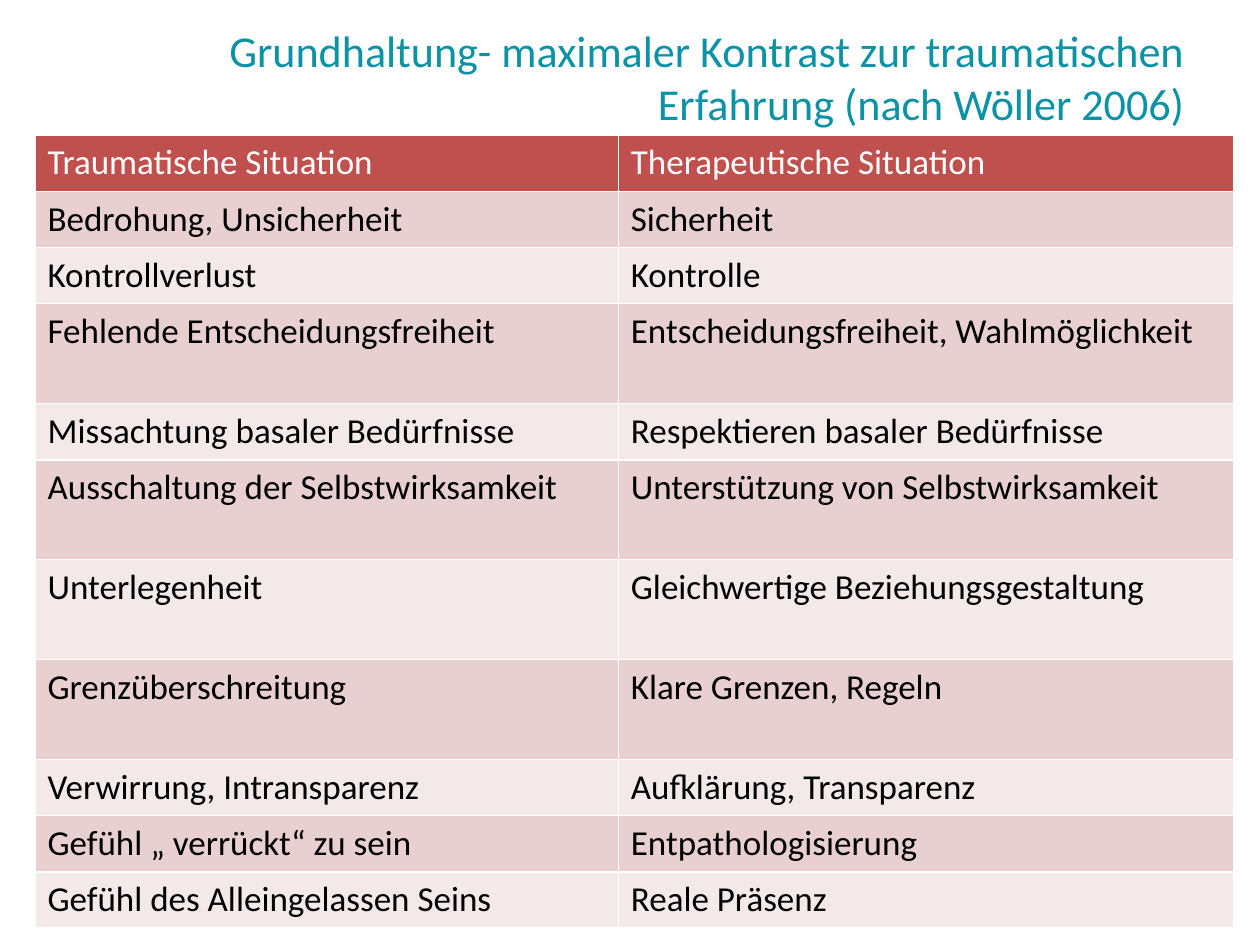
from lxml.etree import SubElement
from pptx import Presentation
from pptx.dml.color import RGBColor
from pptx.enum.text import MSO_ANCHOR, PP_ALIGN
from pptx.oxml.ns import qn
from pptx.util import Pt

FONT = "Calibri"
TEAL = RGBColor(0x0C, 0x92, 0xA5)
RED = RGBColor(0xC0, 0x50, 0x4D)
ROSE = RGBColor(0xE8, 0xD0, 0xD0)
PALE_ROSE = RGBColor(0xF4, 0xE9, 0xE9)
WHITE = RGBColor(0xFF, 0xFF, 0xFF)
BLACK = RGBColor(0, 0, 0)

TITLE = "Grundhaltung- maximaler Kontrast zur traumatischen Erfahrung (nach Wöller 2006)"
LOW, TALL = 32.1, 57.1
COLUMN_WIDTHS = (333.3, 351.5)
CONTRASTS = [
    (LOW, "Traumatische Situation", "Therapeutische Situation"),
    (LOW, "Bedrohung, Unsicherheit", "Sicherheit"),
    (LOW, "Kontrollverlust", "Kontrolle"),
    (TALL, "Fehlende Entscheidungsfreiheit", "Entscheidungsfreiheit, Wahlmöglichkeit"),
    (LOW, "Missachtung basaler Bedürfnisse", "Respektieren basaler Bedürfnisse"),
    (TALL, "Ausschaltung der Selbstwirksamkeit", "Unterstützung von Selbstwirksamkeit"),
    (TALL, "Unterlegenheit", "Gleichwertige Beziehungsgestaltung"),
    (TALL, "Grenzüberschreitung", "Klare Grenzen, Regeln"),
    (LOW, "Verwirrung, Intransparenz", "Aufklärung, Transparenz"),
    (LOW, "Gefühl „ verrückt“ zu sein", "Entpathologisierung"),
    (LOW, "Gefühl des Alleingelassen Seins", "Reale Präsenz"),
]


def add_run(paragraph, text, size, color):
    run = paragraph.add_run()
    run.text = text
    run.font.name = FONT
    run.font.size = Pt(size)
    run.font.bold = False
    run.font.color.rgb = color


def add_title(slide):
    heading = slide.shapes.add_textbox(Pt(36), Pt(21.6), Pt(648), Pt(44))
    frame = heading.text_frame
    frame.word_wrap = True
    frame.vertical_anchor = MSO_ANCHOR.MIDDLE
    frame.paragraphs[0].alignment = PP_ALIGN.RIGHT
    add_run(frame.paragraphs[0], TITLE, 25.2, TEAL)


def add_borders(cell):
    """White 1 pt lines on all sides; they go before the fill in tcPr."""
    properties = cell._tc.get_or_add_tcPr()
    for position, side in enumerate(("a:lnL", "a:lnR", "a:lnT", "a:lnB")):
        line = SubElement(properties, qn(side), w=str(Pt(1)))
        line_fill = SubElement(line, qn("a:solidFill"))
        SubElement(line_fill, qn("a:srgbClr"), val=str(WHITE))
        properties.insert(position, line)


def fill_cell(cell, text, fill, color):
    cell.fill.solid()
    cell.fill.fore_color.rgb = fill
    add_borders(cell)
    add_run(cell.text_frame.paragraphs[0], text, 20, color)


def add_contrast_table(slide):
    total_height = sum(height for height, *_ in CONTRASTS)
    table = slide.shapes.add_table(
        len(CONTRASTS), len(COLUMN_WIDTHS),
        Pt(20), Pt(77.3), Pt(sum(COLUMN_WIDTHS)), Pt(total_height)).table
    for column, width in zip(table.columns, COLUMN_WIDTHS):
        column.width = Pt(width)
    for index, (height, *texts) in enumerate(CONTRASTS):
        table.rows[index].height = Pt(height)
        # Red header, then alternating bands
        if index == 0:
            fill, color = RED, WHITE
        else:
            fill, color = (ROSE if index % 2 else PALE_ROSE), BLACK
        for cell, text in zip(table.rows[index].cells, texts):
            fill_cell(cell, text, fill, color)


def main():
    deck = Presentation()
    deck.slide_width, deck.slide_height = Pt(720), Pt(540)
    slide = deck.slides.add_slide(deck.slide_layouts[6])
    add_title(slide)
    add_contrast_table(slide)
    deck.save("out.pptx")


if __name__ == "__main__":
    main()
